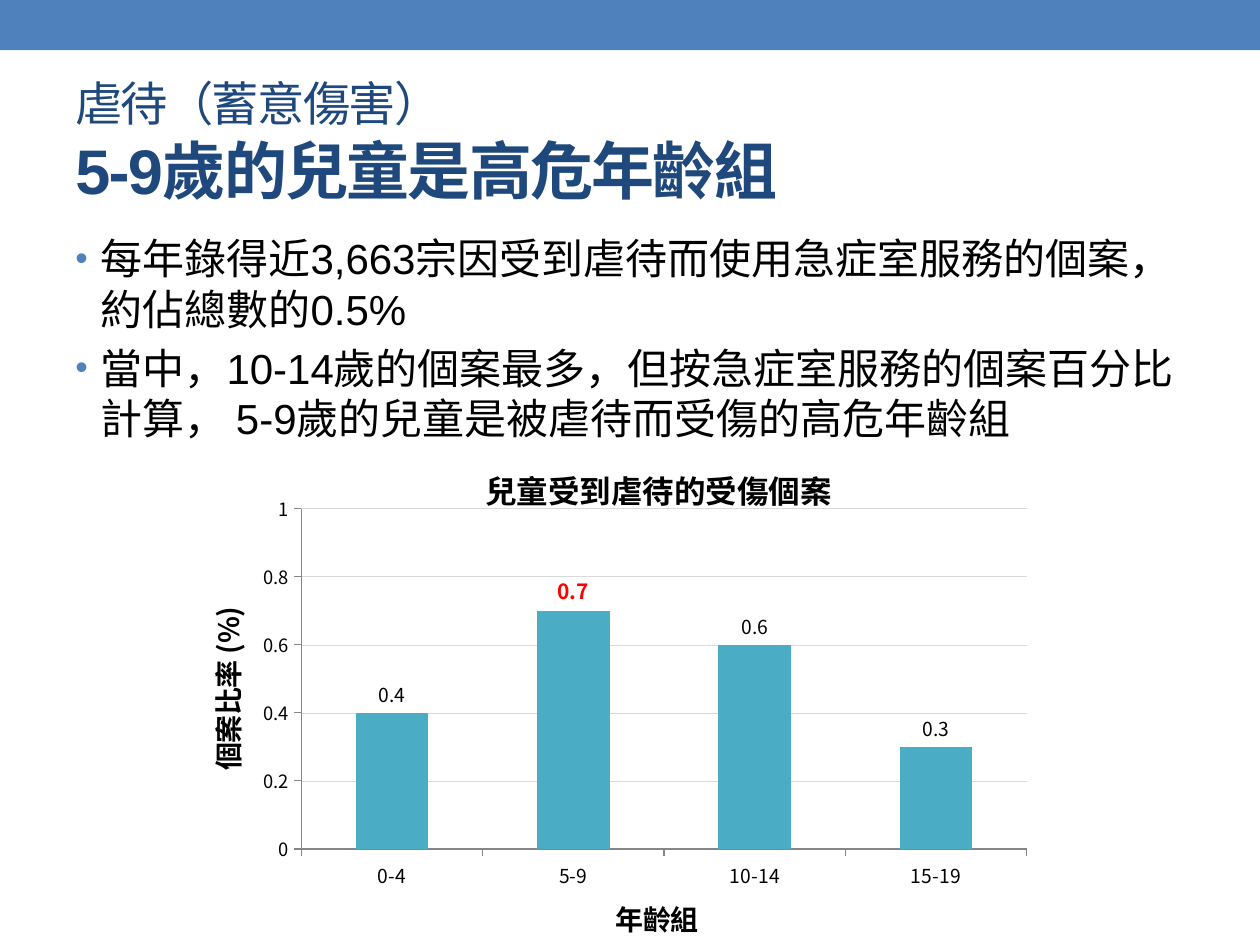
import pptx
import pptx.chart.data
import pptx.dml.color
import pptx.enum.chart
import pptx.enum.shapes
import pptx.enum.text
import pptx.oxml
import pptx.oxml.ns
import pptx.util
from lxml import etree

WIDTH, HEIGHT = pptx.util.Inches(10), pptx.util.Inches(7.5)
COLORS = {"band": "4F81BD", "title": "1F497D", "text": "000000", "bar": "4BACC6",
          "alert": "FF0000", "grid": "D9D9D9", "axis": "868686"}
LATIN, CJK = "Arial", "Noto Sans CJK TC"

TITLE_LINES = [("虐待（蓄意傷害）", {"size": 27}),
               ("5-9歲的兒童是高危年齡組", {"size": 36, "bold": True})]
BULLETS = ["每年錄得近3,663宗因受到虐待而使用急症室服務的個案，約佔總數的0.5%",
           "當中，10-14歲的個案最多，但按急症室服務的個案百分比計算， 5-9歲的兒童是被虐待而受傷的高危年齡組"]
AGE_GROUPS = ["0-4", "5-9", "10-14", "15-19"]
CASE_RATES = [0.4, 0.7, 0.6, 0.3]
HIGH_RISK = 1

# Shares of the slide: left, top, width, height
BAND_BOX = (0, 0, 1, 0.053)
TITLE_BOX = (0.05, 0.077, 0.9, 0.144)
BODY_BOX = (0.05, 0.24, 0.9, 0.71)
CHART_BOX = (0.138, 0.468, 0.693, 0.545)


def place(box):
    left, top, width, height = box
    return [round(value) for value in
            (left * WIDTH, top * HEIGHT, width * WIDTH, height * HEIGHT)]


def rgb(name):
    return pptx.dml.color.RGBColor.from_string(COLORS[name])


def set_font(font, color="text", **formats):
    font.color.rgb = rgb(color)
    for name, value in formats.items():
        setattr(font, name, pptx.util.Pt(value) if name == "size" else value)


def add_run(paragraph, text, **formats):
    """Add a run that has both a Latin and an East Asian typeface."""
    run = paragraph.add_run()
    run.text = text
    set_font(run.font, **formats)
    properties = run._r.get_or_add_rPr()
    etree.SubElement(properties, pptx.oxml.ns.qn("a:ea"), typeface=CJK)
    return properties


def add_text_box(slide, box, anchor):
    text_frame = slide.shapes.add_textbox(*place(box)).text_frame
    text_frame.word_wrap = True
    text_frame.vertical_anchor = anchor
    return text_frame


def add_band(slide, box):
    band = slide.shapes.add_shape(pptx.enum.shapes.MSO_SHAPE.RECTANGLE, *place(box))
    band.shadow.inherit = False
    band.fill.solid()
    band.fill.fore_color.rgb = rgb("band")
    band.line.fill.background()


def add_title(slide, box):
    text_frame = add_text_box(slide, box, pptx.enum.text.MSO_ANCHOR.MIDDLE)
    paragraph = text_frame.paragraphs[0]
    for index, (text, formats) in enumerate(TITLE_LINES):
        if index:
            paragraph.add_line_break()
        properties = add_run(paragraph, text, color="title", name=LATIN, **formats)
        properties.set("spc", "-100")


def set_bullet(paragraph):
    properties = paragraph._p.get_or_add_pPr()
    indent = pptx.util.Inches(0.2)
    properties.set("marL", str(indent))
    properties.set("indent", str(-indent))
    namespace = pptx.oxml.ns.nsdecls("a")
    for markup in (
            f'<a:spcBef {namespace}><a:spcPct val="20000"/></a:spcBef>',
            f'<a:buClr {namespace}><a:srgbClr val="{COLORS["band"]}"/></a:buClr>',
            f'<a:buSzPct {namespace} val="85000"/>',
            f'<a:buFont {namespace} typeface="{LATIN}"/>',
            f'<a:buChar {namespace} char="•"/>'):
        properties.append(pptx.oxml.parse_xml(markup))


def add_bullets(slide, box):
    text_frame = add_text_box(slide, box, pptx.enum.text.MSO_ANCHOR.TOP)
    for index, text in enumerate(BULLETS):
        paragraph = text_frame.add_paragraph() if index else text_frame.paragraphs[0]
        set_bullet(paragraph)
        add_run(paragraph, text, name=LATIN, size=24)


def set_layout(element, **shares):
    """Fix the place of a chart part, as shares of the chart's size."""
    qn = pptx.oxml.ns.qn
    for old_layout in element.findall(qn("c:layout")):
        element.remove(old_layout)
    layout = etree.Element(qn("c:layout"))
    manual = etree.SubElement(layout, qn("c:manualLayout"))
    values = {"xMode": "edge", "yMode": "edge", **shares}
    if "w" in shares:
        values = {"layoutTarget": "inner", **values}
    for name, value in values.items():
        etree.SubElement(manual, qn(f"c:{name}"), val=str(value))
    element.insert(0 if element.find(qn("c:tx")) is None else 1, layout)


def set_chart_title(title, text, size, x, y):
    add_run(title.text_frame.paragraphs[0], text, name=CJK, size=size, bold=True)
    set_layout(title._element, x=x, y=y)


def format_axes(chart):
    value_axis, category_axis = chart.value_axis, chart.category_axis
    for axis, size in ((value_axis, 10.5), (category_axis, 11)):
        axis.major_tick_mark = pptx.enum.chart.XL_TICK_MARK.OUTSIDE
        axis.format.line.color.rgb = rgb("axis")
        set_font(axis.tick_labels.font, name=CJK, size=size)
    for name, value in {"minimum_scale": 0, "maximum_scale": 1, "major_unit": 0.2}.items():
        setattr(value_axis, name, value)
    grid_line = value_axis.major_gridlines.format.line
    grid_line.color.rgb = rgb("grid")
    grid_line.width = pptx.util.Pt(0.25)
    set_chart_title(category_axis.axis_title, "年齡組", 16, 0.5, 0.87)
    set_chart_title(value_axis.axis_title, "個案比率 (%)", 16, 0.03, 0.31)
    body = value_axis.axis_title.text_frame._txBody.bodyPr
    body.set("rot", "-5400000")
    body.set("vert", "horz")


def format_bars(plot):
    plot.gap_width = 150
    plot.vary_by_categories = False
    series = plot.series[0]
    series.format.fill.solid()
    series.format.fill.fore_color.rgb = rgb("bar")
    outside = pptx.enum.chart.XL_LABEL_POSITION.OUTSIDE_END
    labels = series.data_labels
    labels.show_value = True
    labels.position = outside
    set_font(labels.font, name=CJK, size=11)
    high_label = series.points[HIGH_RISK].data_label
    set_font(high_label.font, color="alert", name=CJK, size=12, bold=True)
    high_label.position = outside


def add_rate_chart(slide, box):
    data = pptx.chart.data.CategoryChartData()
    data.categories = AGE_GROUPS
    data.add_series("個案比率 (%)", CASE_RATES)
    chart = slide.shapes.add_chart(
        pptx.enum.chart.XL_CHART_TYPE.COLUMN_CLUSTERED, *place(box), data).chart
    chart.has_legend = False
    set_font(chart.font, name=LATIN, size=10)
    set_chart_title(chart.chart_title, "兒童受到虐待的受傷個案", 18, 0.35, 0.03)
    chart.chart_title.include_in_layout = False
    format_axes(chart)
    format_bars(chart.plots[0])
    plot_area = chart._chartSpace.chart.plotArea
    set_layout(plot_area, x=0.146, y=0.129, w=0.831, h=0.661)


def main():
    presentation = pptx.Presentation()
    presentation.slide_width, presentation.slide_height = WIDTH, HEIGHT
    slide = presentation.slides.add_slide(presentation.slide_layouts[6])
    add_band(slide, BAND_BOX)
    add_title(slide, TITLE_BOX)
    add_bullets(slide, BODY_BOX)
    add_rate_chart(slide, CHART_BOX)
    presentation.save("out.pptx")


if __name__ == "__main__":
    main()
